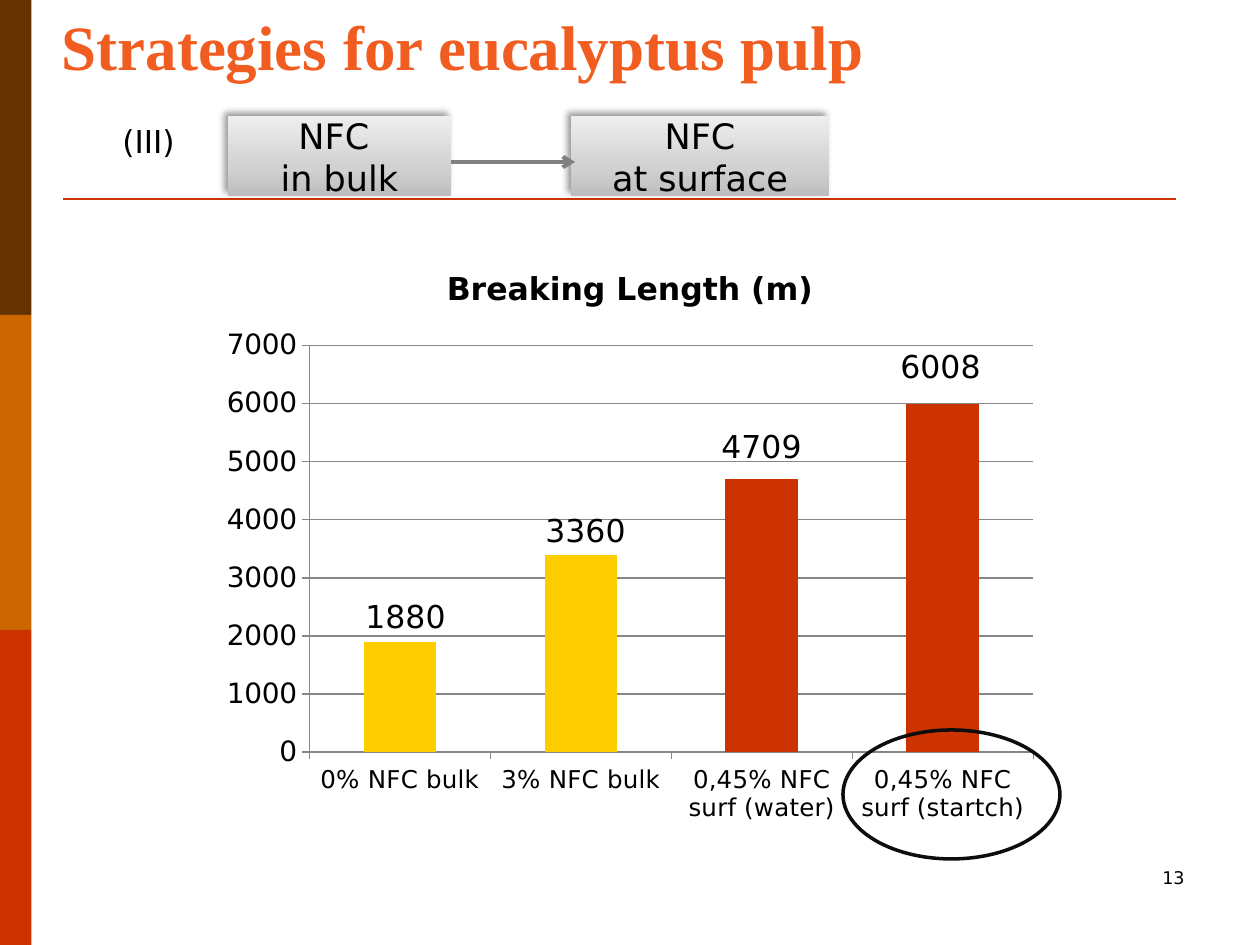
from lxml import etree
from pptx import Presentation
from pptx import util as u
from pptx.chart.data import CategoryChartData
from pptx.dml.color import RGBColor
from pptx.enum import chart as ch, shapes, text
from pptx.oxml.ns import qn

PX = 914400 / 126
HEX = {"brown": "663300", "amber": "CC6600", "red": "CC3300", "gold": "FFCC00",
       "title": "F15D20", "ink": "000000", "ring": "0D0D0D", "arrow": "808080",
       "grid": "868686"}
SANS, SERIF = "DejaVu Sans", "Times New Roman"

# Content: places are left, top, width, height in px
TITLE = "Strategies for eucalyptus pulp"
BANDS = ["brown", "amber", "red"]
STEPS = [("NFC \nin bulk", (228, 116, 223, 80)),
         ("NFC\nat surface", (571, 116, 258, 80))]
BARS = [("0% NFC bulk", 1900, "gold"), ("3% NFC bulk", 3400, "gold"),
        ("0,45% NFC surf (water)", 4700, "red"),
        ("0,45% NFC surf (startch)", 6000, "red")]
NOTES = [("1880", 353, 591), ("3360", 533, 505), ("4709", 709, 421),
         ("6008", 888, 341), ("(III)", 110, 116)]
SHADE = [(0, "BDBDBD"), (35, "D1D1D1"), (100, "EEEEEE")]

DML = "http://schemas.openxmlformats.org/drawingml/2006/main"
STOPS = "".join(f'<a:gs pos="{pos * 1000}"><a:srgbClr val="{val}"/></a:gs>'
                for pos, val in SHADE)
FILL = (f'<a:gradFill xmlns:a="{DML}" rotWithShape="1"><a:gsLst>{STOPS}</a:gsLst>'
        '<a:lin ang="16200000" scaled="1"/></a:gradFill>')
SHADOW = (f'<a:effectLst xmlns:a="{DML}"><a:outerShdw blurRad="50800" dist="38100" '
          'dir="13500000" algn="br" rotWithShape="0"><a:srgbClr val="000000">'
          '<a:alpha val="40000"/></a:srgbClr></a:outerShdw></a:effectLst>')


def px(*vals):
    return [u.Emu(round(v * PX)) for v in vals]


def rgb(name):
    return RGBColor.from_string(HEX[name])


def style(font, size, color="ink", face=SANS, bold=False):
    font.size, font.name, font.bold = u.Pt(size), face, bold
    font.color.rgb = rgb(color)


def write(shape, words, size=18, align="LEFT", anchor="TOP", wrap=True,
          fit="NONE", **look):
    frame = shape.text_frame
    frame.text = words
    frame.word_wrap = wrap
    frame.auto_size = getattr(text.MSO_AUTO_SIZE, fit)
    frame.vertical_anchor = getattr(text.MSO_ANCHOR, anchor)
    for para in frame.paragraphs:
        para.alignment = getattr(text.PP_ALIGN, align)
        style(para.font, size, **look)


def block(kind, place):
    shape = slide.shapes.add_shape(kind, *px(*place))
    shape.shadow.inherit = False
    return shape


def rule(ends, color, width):
    line = slide.shapes.add_connector(shapes.MSO_CONNECTOR.STRAIGHT, *px(*ends))
    line.line.color.rgb = rgb(color)
    line.line.width = u.Pt(width)
    etree.SubElement(line._element.spPr, qn("a:effectLst"))
    return line


deck = Presentation()
deck.slide_width, deck.slide_height = px(1260, 945)
slide = deck.slides.add_slide(deck.slide_layouts[5])

# Side bands and header rule
for i, color in enumerate(BANDS):
    band = block(shapes.MSO_SHAPE.RECTANGLE, (0, 315 * i, 31.5, 315))
    band.fill.solid()
    band.fill.fore_color.rgb = rgb(color)
    band.line.fill.background()
rule((63, 199, 1176, 199), "red", 1.5)

# Title and page number
title = slide.shapes.title
title.left, title.top, title.width, title.height = px(49, 16, 1155, 73)
write(title, TITLE, size=36, anchor="BOTTOM", color="title", face=SERIF, bold=True)
page = slide.shapes.add_textbox(*px(903, 861, 294, 63))
write(page, "13", size=10, align="RIGHT")

# Chart
data = CategoryChartData()
data.categories = [name for name, _, _ in BARS]
data.add_series("Series 1", [val for _, val, _ in BARS])
chart = slide.shapes.add_chart(ch.XL_CHART_TYPE.COLUMN_CLUSTERED,
                               *px(210, 244, 840, 590), data).chart
style(chart.font, 18)
chart.has_legend = False
chart.has_title = True
chart.chart_title.text_frame.text = "Breaking Length (m)"
style(chart.chart_title.text_frame.paragraphs[0].font, 18, bold=True)
plot = chart.plots[0]
plot.gap_width, plot.vary_by_categories = 150, False
for i, (_, _, color) in enumerate(BARS):
    fill = plot.series[0].points[i].format.fill
    fill.solid()
    fill.fore_color.rgb = rgb(color)
for axis, size in ((chart.category_axis, 14), (chart.value_axis, 16)):
    style(axis.tick_labels.font, size)
    axis.major_tick_mark = ch.XL_TICK_MARK.OUTSIDE
    axis.format.line.color.rgb = rgb("grid")
chart.value_axis.has_major_gridlines = True
chart.value_axis.major_gridlines.format.line.color.rgb = rgb("grid")
chart.value_axis.minimum_scale, chart.value_axis.maximum_scale = 0, 7000
chart.value_axis.major_unit = 1000

# Ring around the last category
ring = block(shapes.MSO_SHAPE.OVAL, (843, 730, 217, 129))
ring.fill.background()
ring.line.color.rgb = rgb("ring")
ring.line.width = u.Pt(2)

# Process steps with arrow
for words, place in STEPS:
    step = slide.shapes.add_shape(shapes.MSO_SHAPE.RECTANGLE, *px(*place))
    step.line.fill.background()
    edge = step._element.spPr.find(qn("a:ln"))
    edge.addprevious(etree.fromstring(FILL))
    edge.addnext(etree.fromstring(SHADOW))
    write(step, words, size=20, align="CENTER", anchor="MIDDLE")
arrow = rule((451, 162, 575, 162), "arrow", 2.25)
etree.SubElement(arrow.line._get_or_add_ln(), qn("a:tailEnd"), type="arrow")

# Bar values and step label
for words, left, top in NOTES:
    width = 95 if words == "(III)" else 107
    note = slide.shapes.add_textbox(*px(left, top, width, 50))
    write(note, words, wrap=False, fit="SHAPE_TO_FIT_TEXT")

deck.save("out.pptx")
